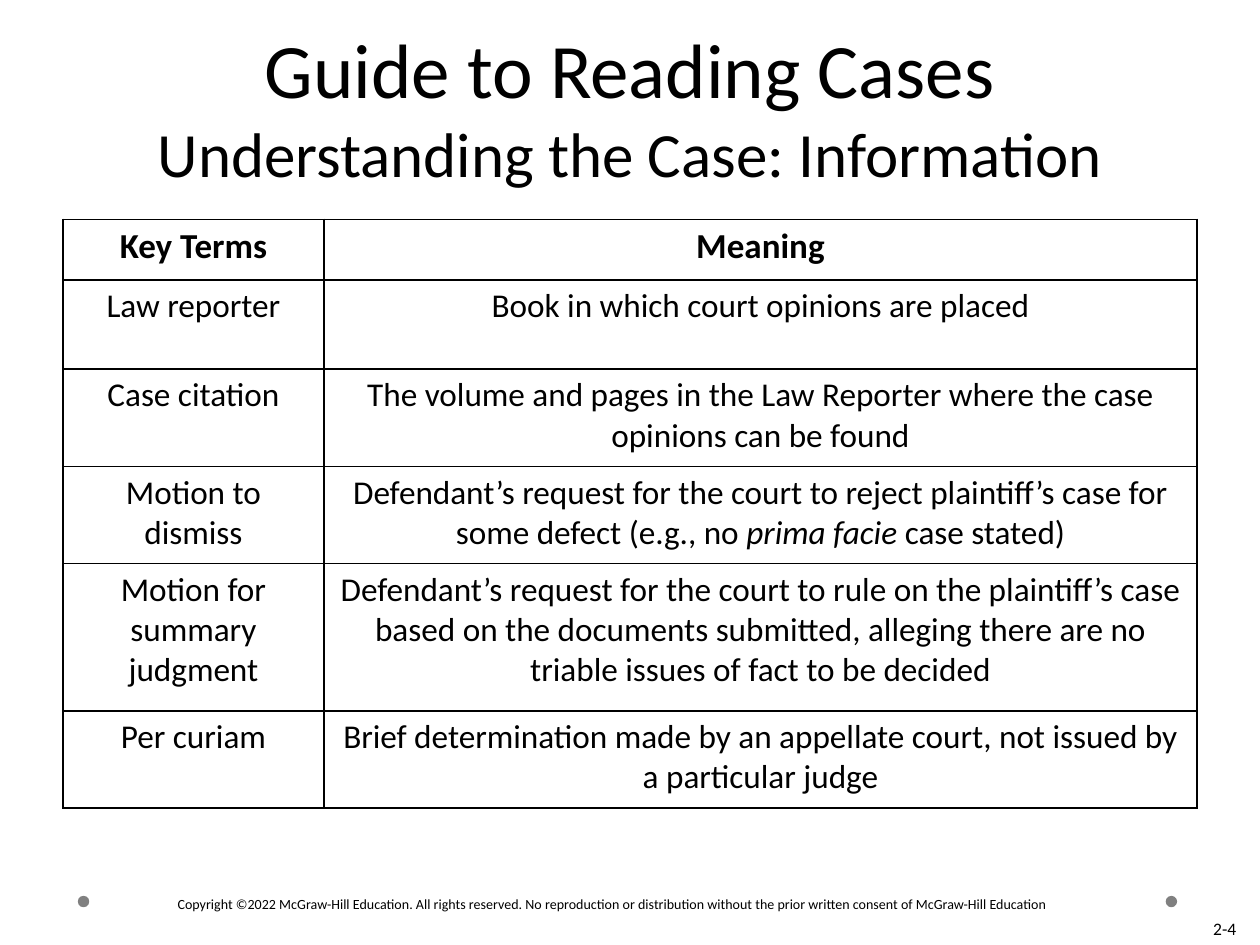
"""Build the slide with key terms for reading court cases."""
import dataclasses

import lxml.etree
import pptx
import pptx.dml.color
import pptx.enum.shapes
import pptx.enum.text
import pptx.oxml.ns
import pptx.util

Cm = pptx.util.Cm
Pt = pptx.util.Pt
RGBColor = pptx.dml.color.RGBColor
Align = pptx.enum.text.PP_ALIGN
Anchor = pptx.enum.text.MSO_ANCHOR


@dataclasses.dataclass(frozen=True)
class Theme:
    font: str = "Calibri"
    ink: RGBColor = RGBColor(0, 0, 0)
    dot: RGBColor = RGBColor(0x80, 0x80, 0x80)
    title: Pt = Pt(44)
    subtitle: Pt = Pt(36)
    header: Pt = Pt(20)
    body: Pt = Pt(19)
    number: Pt = Pt(10)
    copyright: Pt = Pt(8)
    border: Pt = Pt(1)


theme = Theme()


def style(paragraph, size, alignment, bold=False):
    paragraph.alignment = alignment
    paragraph.font.name = theme.font
    paragraph.font.size = size
    paragraph.font.bold = bold
    paragraph.font.color.rgb = theme.ink


def add_borders(cell):
    properties = cell._tc.get_or_add_tcPr()
    for index, side in enumerate(("a:lnL", "a:lnR", "a:lnT", "a:lnB")):
        line = lxml.etree.Element(pptx.oxml.ns.qn(side), w=str(theme.border))
        fill = lxml.etree.SubElement(line, pptx.oxml.ns.qn("a:solidFill"))
        lxml.etree.SubElement(fill, pptx.oxml.ns.qn("a:srgbClr"), val=str(theme.ink))
        properties.insert(index, line)


presentation = pptx.Presentation()
presentation.slide_width = Cm(25.4)
presentation.slide_height = Cm(19.05)
slide = presentation.slides.add_slide(presentation.slide_layouts[6])

for left in (23.5, 1.57):
    dot = slide.shapes.add_shape(
        pptx.enum.shapes.MSO_SHAPE.OVAL, Cm(left), Cm(18.06), Cm(0.23), Cm(0.23)
    )
    dot.shadow.inherit = False
    dot.fill.solid()
    dot.fill.fore_color.rgb = theme.dot
    dot.line.fill.background()

copyright_box = slide.shapes.add_textbox(Cm(3.33), Cm(18.06), Cm(18.39), Cm(0.13))
copyright_frame = copyright_box.text_frame
copyright_frame.word_wrap = True
copyright_frame.margin_top = copyright_frame.margin_bottom = 0
copyright_frame.text = (
    "Copyright ©2022 McGraw-Hill Education. All rights reserved. No reproduction or "
    "distribution without the prior written consent of McGraw-Hill Education"
)
style(copyright_frame.paragraphs[0], theme.copyright, Align.LEFT)

number_box = slide.shapes.add_textbox(Cm(19.25), Cm(17.78), Cm(5.92), Cm(1.27))
number_box.text_frame.word_wrap = True
number_box.text_frame.vertical_anchor = Anchor.BOTTOM
number_box.text_frame.text = "2-4"
style(number_box.text_frame.paragraphs[0], theme.number, Align.RIGHT)

title_box = slide.shapes.add_textbox(Cm(1.27), Cm(0.71), Cm(22.86), Cm(3.12))
title_frame = title_box.text_frame
title_frame.word_wrap = True
title_frame.vertical_anchor = Anchor.BOTTOM
title_frame.margin_top = title_frame.margin_bottom = 0
title_paragraph = title_frame.paragraphs[0]
style(title_paragraph, theme.title, Align.CENTER)
title_paragraph.add_run().text = "Guide to Reading Cases"
title_paragraph.add_line_break()
subtitle_run = title_paragraph.add_run()
subtitle_run.text = "Understanding the Case: Information"
subtitle_run.font.size = theme.subtitle

italic_phrase = "prima facie"
rows = [
    (1.22, "Key Terms", "Meaning"),
    (1.8, "Law reporter", "Book in which court opinions are placed"),
    (1.96, "Case citation",
     "The volume and pages in the Law Reporter where the case opinions can be found"),
    (1.96, "Motion to dismiss",
     "Defendant’s request for the court to reject plaintiff’s case for some defect "
     "(e.g., no prima facie case stated)"),
    (2.97, "Motion for summary judgment",
     "Defendant’s request for the court to rule on the plaintiff’s case based on the "
     "documents submitted, alleging there are no triable issues of fact to be decided"),
    (1.96, "Per curiam",
     "Brief determination made by an appellate court, not issued by a particular judge"),
]
table = slide.shapes.add_table(
    len(rows), 2, Cm(1.27), Cm(4.42), Cm(22.86), Cm(sum(row[0] for row in rows))
).table
table.horz_banding = False
for column, width in zip(table.columns, (5.26, 17.6)):
    column.width = Cm(width)

for row_index, (height, *texts) in enumerate(rows):
    table.rows[row_index].height = Cm(height)
    is_header = row_index == 0
    for column_index, text in enumerate(texts):
        cell = table.cell(row_index, column_index)
        cell.fill.background()
        add_borders(cell)
        paragraph = cell.text_frame.paragraphs[0]
        style(paragraph, theme.header if is_header else theme.body, Align.CENTER, is_header)
        before, phrase, after = text.partition(italic_phrase)
        for part in filter(None, (before, phrase, after)):
            run = paragraph.add_run()
            run.text = part
            if part == italic_phrase:
                run.font.italic = True

presentation.save("out.pptx")
